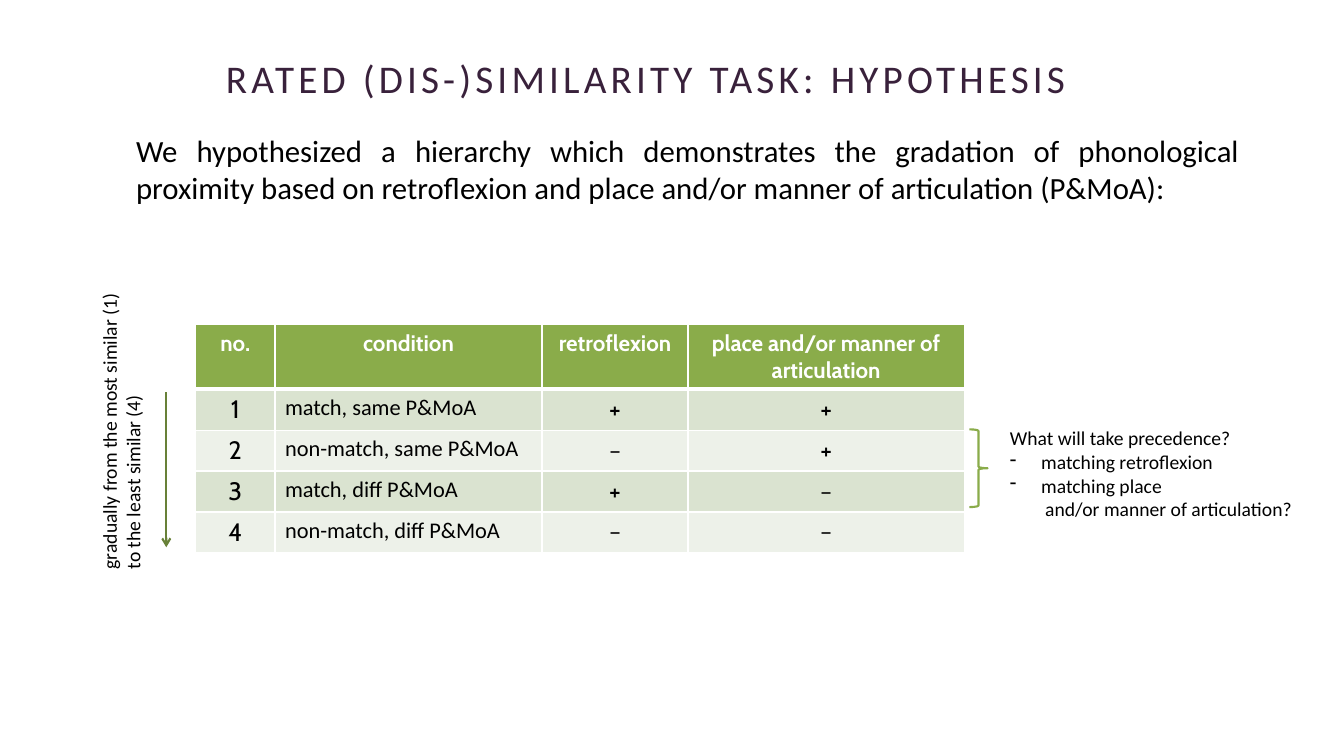
from dataclasses import dataclass

from lxml.etree import SubElement
from pptx import Presentation
from pptx.dml.color import RGBColor
from pptx.enum.shapes import MSO_CONNECTOR, MSO_SHAPE
from pptx.enum.text import MSO_ANCHOR, MSO_AUTO_SIZE, PP_ALIGN
from pptx.oxml.ns import qn
from pptx.slide import Slide
from pptx.text.text import TextFrame
from pptx.util import Cm, Pt

COLORS = {
    "title": "39213B",
    "text": "000000",
    "white": "FFFFFF",
    "header": "8AAC4A",
    "odd_row": "DAE3D0",
    "even_row": "EDF1E9",
    "arrow": "688138",
}


@dataclass
class Line:
    text: str
    indent: float = 0
    bullet: str = ""


@dataclass
class TextBox:
    lines: list[Line]
    left: float
    top: float
    width: float
    height: float
    size: float
    color: str = "text"
    align: PP_ALIGN = PP_ALIGN.LEFT
    anchor: MSO_ANCHOR = MSO_ANCHOR.TOP
    wrap: bool = True
    rotation: float = 0
    margin_right: float = 0.25
    line_spacing: float = 1.0
    space_before: float = 0
    letter_spacing: float = 0


@dataclass
class Condition:
    name: str
    retroflexion: str
    articulation: str


TEXT_BOXES = [
    TextBox([Line("RATED (DIS-)SIMILARITY TASK: HYPOTHESIS")], 3.76, 1.09, 26.37, 1.6, 28,
            color="title", align=PP_ALIGN.CENTER, anchor=MSO_ANCHOR.BOTTOM,
            margin_right=1.57, line_spacing=0.9, letter_spacing=3),
    TextBox([Line("We hypothesized a hierarchy which demonstrates the gradation of phonological "
                  "proximity based on retroflexion and place and/or manner of articulation "
                  "(P&MoA):")],
            3.18, 3.2, 28.3, 12.07, 22, align=PP_ALIGN.JUSTIFY, space_before=6),
    TextBox([Line("gradually from the most similar (1)"), Line("to the least similar (4)")],
            -0.76, 10.06, 7.62, 1.45, 14, wrap=False, rotation=270),
    TextBox([Line("What will take precedence?"),
             Line("matching retroflexion", 0.79, "-"),
             Line("matching place", 0.79, "-"),
             Line("and/or manner of articulation?", 0.89)],
            25.2, 10.62, 7.7, 2.64, 14, wrap=False),
]

HEADINGS = ["no.", "condition", "retroflexion", "place and/or manner of articulation"]
COLUMN_WIDTHS = [2.0, 6.73, 3.68, 6.96]
HEADER_HEIGHT, ROW_HEIGHT = 1.63, 1.03
CONDITIONS = [
    Condition("match, same P&MoA", "+", "+"),
    Condition("non-match, same P&MoA", "–", "+"),
    Condition("match, diff P&MoA", "+", "–"),
    Condition("non-match, diff P&MoA", "–", "–"),
]


def rgb(name: str) -> RGBColor:
    return RGBColor.from_string(COLORS[name])


def write_line(frame: TextFrame, line: Line, *, size: float, color: str = "text",
               font: str = "Calibri", bold: bool = False, align: PP_ALIGN = PP_ALIGN.LEFT,
               line_spacing: float = 1.0, space_before: float = 0,
               letter_spacing: float = 0) -> None:
    """Fill the empty first paragraph, or append a new one."""
    paragraph = frame.paragraphs[0] if not frame.text else frame.add_paragraph()
    paragraph.alignment = align
    paragraph.line_spacing = line_spacing
    paragraph.space_before = Pt(space_before)
    run = paragraph.add_run()
    run.text = line.text
    run.font.name, run.font.size, run.font.bold = font, Pt(size), bold
    run.font.color.rgb = rgb(color)
    if letter_spacing:
        run.font._element.set("spc", str(int(letter_spacing * 100)))
    if line.indent:
        properties = paragraph._p.get_or_add_pPr()
        properties.set("marL", str(Cm(line.indent)))
        if line.bullet:
            properties.set("indent", str(-Cm(line.indent)))
            SubElement(properties, qn("a:buChar"), char=line.bullet)


def add_text_box(slide: Slide, box: TextBox) -> None:
    shape = slide.shapes.add_textbox(Cm(box.left), Cm(box.top), Cm(box.width), Cm(box.height))
    shape.rotation = box.rotation
    frame = shape.text_frame
    frame.word_wrap = box.wrap
    frame.auto_size = MSO_AUTO_SIZE.NONE if box.wrap else MSO_AUTO_SIZE.SHAPE_TO_FIT_TEXT
    frame.vertical_anchor = box.anchor
    frame.margin_right = Cm(box.margin_right)
    for line in box.lines:
        write_line(frame, line, size=box.size, color=box.color, align=box.align,
                   line_spacing=box.line_spacing, space_before=box.space_before,
                   letter_spacing=box.letter_spacing)


def add_cell_borders(cell, *, top: float, bottom: float) -> None:
    properties = cell._tc.get_or_add_tcPr()
    widths = {"lnL": 1, "lnR": 1, "lnT": top, "lnB": bottom}
    for side, width in widths.items():
        border = SubElement(properties, qn(f"a:{side}"), w=str(Pt(width)))
        fill = SubElement(border, qn("a:solidFill"))
        SubElement(fill, qn("a:srgbClr"), val=COLORS["white"])


def add_condition_table(slide: Slide) -> None:
    rows = [HEADINGS] + [[str(number), condition.name, condition.retroflexion,
                          condition.articulation]
                         for number, condition in enumerate(CONDITIONS, 1)]
    table = slide.shapes.add_table(
        len(rows), len(HEADINGS), Cm(4.93), Cm(8.18), Cm(sum(COLUMN_WIDTHS)),
        Cm(HEADER_HEIGHT + ROW_HEIGHT * len(CONDITIONS))).table
    for column, width in zip(table.columns, COLUMN_WIDTHS):
        column.width = Cm(width)
    for row_index, texts in enumerate(rows):
        is_header = row_index == 0
        table.rows[row_index].height = Cm(HEADER_HEIGHT if is_header else ROW_HEIGHT)
        row_fill = "header" if is_header else "odd_row" if row_index % 2 else "even_row"
        for column_index, text in enumerate(texts):
            cell = table.cell(row_index, column_index)
            is_name = column_index == 1 and not is_header
            add_cell_borders(cell, top=3 if row_index == 1 else 1, bottom=3 if is_header else 1)
            cell.fill.solid()
            cell.fill.fore_color.rgb = rgb(row_fill)
            if column_index == 0 and row_index in (2, 3):
                cell.vertical_anchor = MSO_ANCHOR.MIDDLE
            write_line(cell.text_frame, Line(text), size=16 if is_header or is_name else 18,
                       color="white" if is_header else "text",
                       font="Calibri" if is_name or text == "–" else "Cabin",
                       bold=is_header, align=PP_ALIGN.LEFT if is_name else PP_ALIGN.CENTER)


def add_similarity_arrow(slide: Slide) -> None:
    arrow = slide.shapes.add_connector(
        MSO_CONNECTOR.STRAIGHT, Cm(4.19), Cm(9.88), Cm(4.19), Cm(13.79))
    arrow.line.color.rgb = rgb("arrow")
    arrow.line.width = Pt(1.5)
    SubElement(arrow.line._get_or_add_ln(), qn("a:tailEnd"), type="arrow")
    SubElement(arrow._element.spPr, qn("a:effectLst"))


def add_precedence_brace(slide: Slide) -> None:
    brace = slide.shapes.add_shape(
        MSO_SHAPE.RIGHT_BRACE, Cm(24.43), Cm(10.82), Cm(0.46), Cm(1.96))
    brace.shadow.inherit = False
    brace.fill.background()
    brace.line.color.rgb = rgb("header")
    brace.line.width = Pt(1.5)


def main() -> None:
    presentation = Presentation()
    presentation.slide_width, presentation.slide_height = Cm(33.87), Cm(19.05)
    slide = presentation.slides.add_slide(presentation.slide_layouts[6])

    # Title, introduction and side notes
    for box in TEXT_BOXES:
        add_text_box(slide, box)

    # Hierarchy of conditions with its annotations
    add_condition_table(slide)
    add_similarity_arrow(slide)
    add_precedence_brace(slide)

    presentation.save("out.pptx")


if __name__ == "__main__":
    main()
